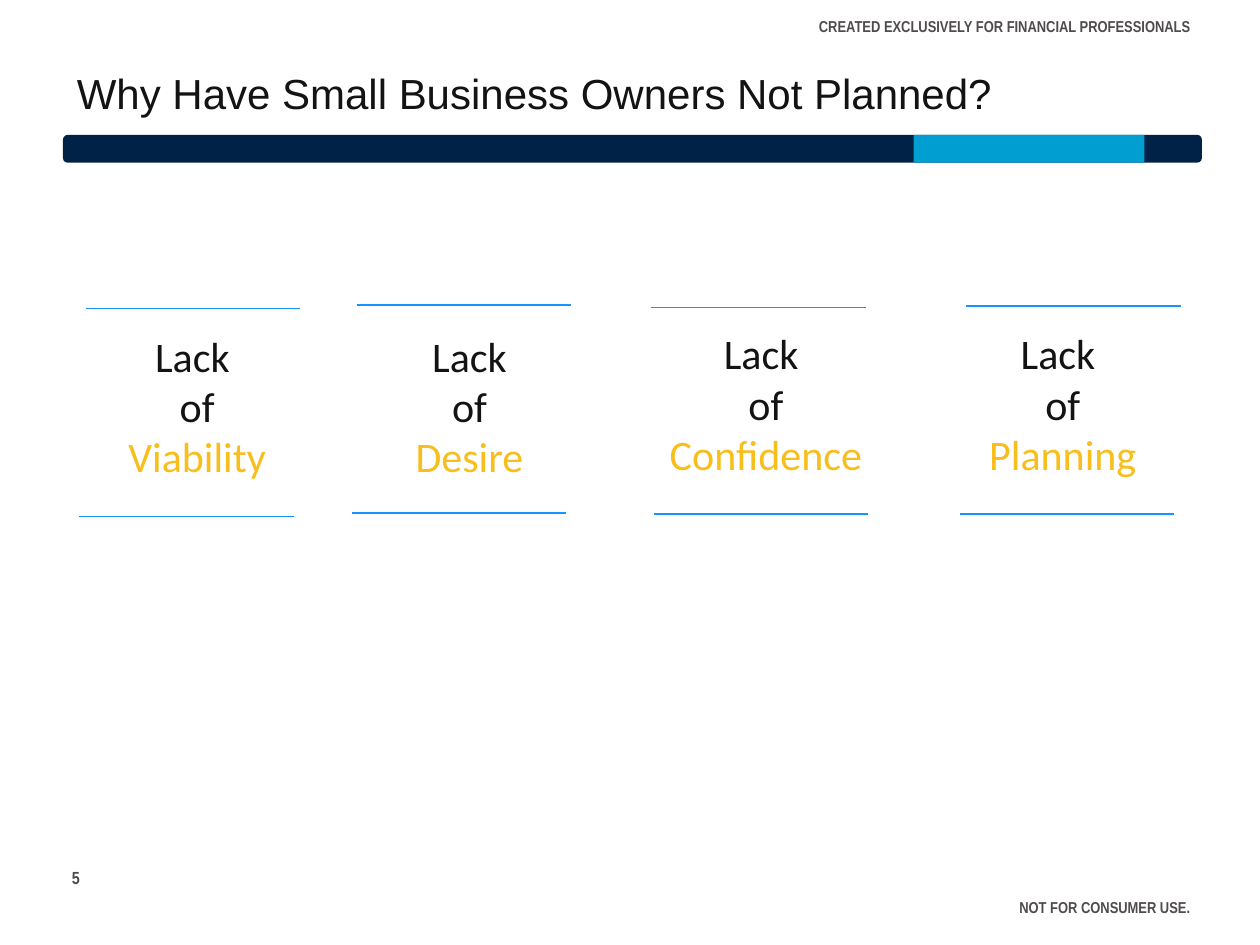
import pptx
import pptx.util
import pptx.dml.color
import pptx.enum.shapes
import pptx.enum.text
import lxml.etree
from pptx.util import Cm, Pt
from pptx.oxml.ns import qn

NAVY = pptx.dml.color.RGBColor(0x00, 0x22, 0x47)
CYAN = pptx.dml.color.RGBColor(0x00, 0x9E, 0xD1)
LINE_BLUE = pptx.dml.color.RGBColor(0x17, 0x95, 0xFF)
GOLD = pptx.dml.color.RGBColor(0xF7, 0xBE, 0x1C)
BLACK = pptx.dml.color.RGBColor(0x14, 0x13, 0x13)
GRAY = pptx.dml.color.RGBColor(0x50, 0x4C, 0x4C)

presentation = pptx.Presentation()
presentation.slide_width = Cm(25.4)
presentation.slide_height = Cm(19.05)
slide = presentation.slides.add_slide(presentation.slide_layouts[6])


def add_text(left, top, width, height, lines, font_name, size, bold=False):
    """Add a text box with one paragraph per (text, colour) line."""
    box = slide.shapes.add_textbox(Cm(left), Cm(top), Cm(width), Cm(height))
    frame = box.text_frame
    for index, (text, color) in enumerate(lines):
        paragraph = frame.add_paragraph() if index else frame.paragraphs[0]
        run = paragraph.add_run()
        run.text = text
        run.font.name = font_name
        run.font.size = Pt(size)
        run.font.bold = bold
        run.font.color.rgb = color
    return frame


# Title bar with its accent
for kind, left, width, color in (
    (pptx.enum.shapes.MSO_SHAPE.ROUNDED_RECTANGLE, 1.27, 22.96, NAVY),
    (pptx.enum.shapes.MSO_SHAPE.RECTANGLE, 18.42, 4.65, CYAN),
):
    bar = slide.shapes.add_shape(kind, Cm(left), Cm(2.72), Cm(width), Cm(0.56))
    bar.shadow.inherit = False
    bar.fill.solid()
    bar.fill.fore_color.rgb = color
    bar.line.fill.background()

# Header notice, page number and footer notice
for left, top, width, height, text, size in (
    (16.28, 0.05, 9.07, 0.97, "CREATED EXCLUSIVELY FOR FINANCIAL PROFESSIONALS", 9),
    (1.22, 17.09, 1.04, 1.19, "5", 10),
    (20.32, 17.7, 4.45, 1.19, "NOT FOR CONSUMER USE.", 9),
):
    frame = add_text(left, top, width, height, [(text, GRAY)], "Arial Narrow", size, True)
    frame.word_wrap = True
    frame.vertical_anchor = pptx.enum.text.MSO_ANCHOR.MIDDLE
    frame.margin_left = frame.margin_right = Cm(0.23)
    frame.margin_top = frame.margin_bottom = Cm(0.11)

# Title
title = add_text(1.3, 1.24, 19.15, 1.27,
                 [("Why Have Small Business Owners Not Planned?", BLACK)], "Arial", 24)
title.word_wrap = False
title.auto_size = pptx.enum.text.MSO_AUTO_SIZE.SHAPE_TO_FIT_TEXT

# Four reasons, each between two rules: first line, reason, box, rule starts
reasons = (
    ("Lack ", "Viability", (2.26, 6.53, 3.43), ((1.73, 6.22), (1.6, 10.41))),
    ("Lack", "Desire", (8.08, 6.53, 2.77), ((7.19, 6.15), (7.09, 10.34))),
    ("Lack ", "Confidence", (13.18, 6.48, 4.52), ((13.13, 6.2), (13.18, 10.36))),
    ("Lack ", "Planning", (19.61, 6.48, 3.63), ((19.48, 6.17), (19.35, 10.36))),
)
for first_line, reason, (left, top, width), rules in reasons:
    lines = [(first_line, BLACK), ("of", BLACK), (reason, GOLD)]
    frame = add_text(left, top, width, 3.33, lines, "Calibri", 24)
    frame.word_wrap = False
    frame.auto_size = pptx.enum.text.MSO_AUTO_SIZE.SHAPE_TO_FIT_TEXT
    for paragraph in frame.paragraphs:
        paragraph.alignment = pptx.enum.text.PP_ALIGN.CENTER
    for x, y in rules:
        rule = slide.shapes.add_connector(
            pptx.enum.shapes.MSO_CONNECTOR.STRAIGHT, Cm(x), Cm(y), Cm(x + 4.32), Cm(y))
        rule.line.color.rgb = LINE_BLUE
        rule.line.width = Pt(0.75)
        lxml.etree.SubElement(rule._element.spPr, qn("a:effectLst"))

presentation.save("out.pptx")
